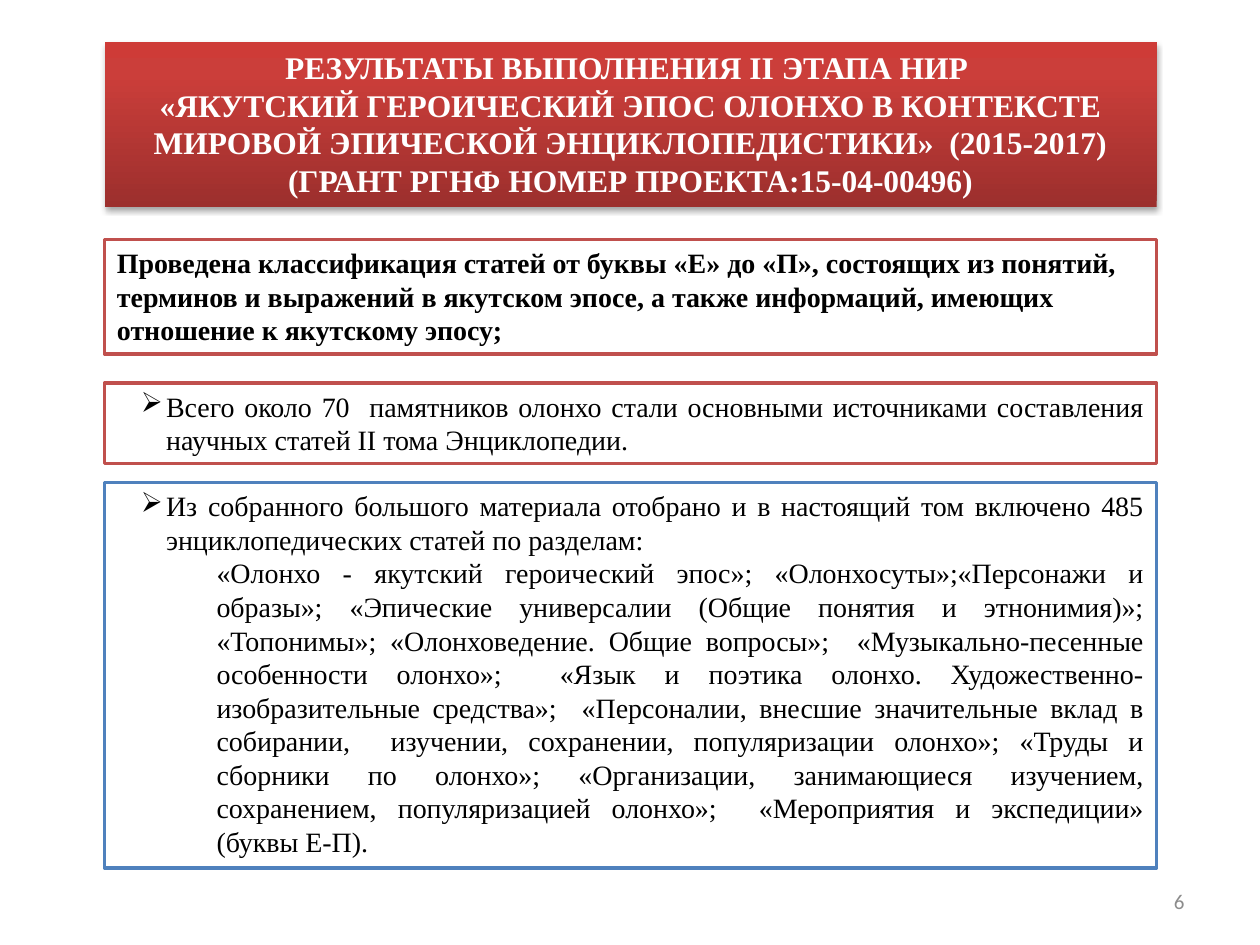
from copy import deepcopy

from lxml.etree import SubElement
from pptx import Presentation
from pptx.dml.color import RGBColor
from pptx.enum.shapes import MSO_SHAPE
from pptx.enum.text import MSO_ANCHOR, MSO_AUTO_SIZE, PP_ALIGN
from pptx.oxml.ns import qn
from pptx.util import Pt

PX = 9144  # EMU per px, 100 px to the inch
WHITE = RGBColor(0xFF, 0xFF, 0xFF)
BLACK = RGBColor(0x00, 0x00, 0x00)
GREY = RGBColor(0x8C, 0x8C, 0x8C)
RED = RGBColor(0xC0, 0x50, 0x4D)
BLUE = RGBColor(0x4F, 0x81, 0xBD)
BANNER_STOPS = [
    (0, RGBColor(0x9C, 0x2F, 0x2D)),
    (0.8, RGBColor(0xCB, 0x3E, 0x3A)),
    (1, RGBColor(0xCE, 0x3B, 0x37)),
]
LEFT, WIDTH = 83, 835

TITLE = [
    "РЕЗУЛЬТАТЫ ВЫПОЛНЕНИЯ II ЭТАПА НИР ",
    "«ЯКУТСКИЙ ГЕРОИЧЕСКИЙ ЭПОС ОЛОНХО В КОНТЕКСТЕ МИРОВОЙ ЭПИЧЕСКОЙ "
    "ЭНЦИКЛОПЕДИCТИКИ»  (2015-2017)",
    "(ГРАНТ РГНФ НОМЕР ПРОЕКТА:15-04-00496)",
]
CLASSIFICATION = (
    "Проведена классификация статей от буквы «Е» до «П», состоящих из понятий, "
    "терминов и выражений в якутском эпосе, а также информаций, имеющих "
    "отношение к якутскому эпосу;"
)
SOURCES = (
    "Всего около 70  памятников олонхо стали основными источниками "
    "составления научных статей II тома Энциклопедии. "
)
SELECTION = (
    "Из собранного большого материала отобрано и в настоящий том включено 485 "
    "энциклопедических статей по разделам: "
)
SECTIONS = (
    "«Олонхо - якутский героический эпос»; «Олонхосуты»;«Персонажи и образы»; "
    "«Эпические универсалии (Общие понятия и этнонимия)»; «Топонимы»; "
    "«Олонховедение. Общие вопросы»;  «Музыкально-песенные особенности олонхо»;  "
    "«Язык и поэтика олонхо. Художественно-изобразительные средства»;  "
    "«Персоналии, внесшие значительные вклад в собирании,  изучении, сохранении, "
    "популяризации олонхо»; «Труды и сборники по олонхо»; «Организации, "
    "занимающиеся изучением, сохранением, популяризацией олонхо»;  "
    "«Мероприятия и экспедиции» (буквы Е-П). "
)


class SlideBuilder:
    font = "Times New Roman"

    def __init__(self, slide):
        self.slide = slide

    def fill_text(self, frame, texts, size, color, align, bold=False, font=None):
        frame.word_wrap = True
        frame.text = "\n".join(texts)
        for paragraph in frame.paragraphs:
            paragraph.alignment = align
            for run in paragraph.runs:
                run.font.name = font or self.font
                run.font.size = Pt(size)
                run.font.bold = bold
                run.font.color.rgb = color

    def box(self, top, height):
        box = self.slide.shapes.add_shape(
            MSO_SHAPE.RECTANGLE, LEFT * PX, top * PX, WIDTH * PX, height * PX)
        box.shadow.inherit = False
        box.text_frame.vertical_anchor = MSO_ANCHOR.TOP
        box.text_frame.auto_size = MSO_AUTO_SIZE.SHAPE_TO_FIT_TEXT
        return box

    def banner(self, top, height, texts):
        banner = self.box(top, height)
        banner.line.fill.background()
        banner.fill.gradient()
        banner.fill.gradient_angle = 90
        properties = banner.element.spPr
        stop_list = properties.find(".//" + qn("a:gsLst"))
        stop_list.append(deepcopy(stop_list[0]))
        for stop, (position, color) in zip(banner.fill.gradient_stops, BANNER_STOPS):
            stop.position = position
            stop.color.rgb = color
        shadow = SubElement(
            properties.find(qn("a:effectLst")), qn("a:outerShdw"),
            blurRad="40000", dist="23000", dir="5400000", rotWithShape="0")
        shade = SubElement(shadow, qn("a:srgbClr"), val="000000")
        SubElement(shade, qn("a:alpha"), val="35000")
        self.fill_text(banner.text_frame, texts, 18, WHITE, PP_ALIGN.CENTER, bold=True)

    def panel(self, top, height, outline, texts, align=PP_ALIGN.LEFT, bold=False):
        panel = self.box(top, height)
        panel.fill.solid()
        panel.fill.fore_color.rgb = WHITE
        panel.line.color.rgb = outline
        panel.line.width = Pt(2)
        self.fill_text(panel.text_frame, texts, 16, BLACK, align, bold)
        return panel.text_frame.paragraphs

    def bullet_panel(self, top, height, outline, bullet, *details):
        """Panel with one arrow bullet and deeper indented details below it."""
        first, *rest = self.panel(
            top, height, outline, [bullet, *details], PP_ALIGN.JUSTIFY)
        self.indent(first, 39, -20)
        SubElement(first._p.get_or_add_pPr(), qn("a:buChar"), char="➢")
        for detail in rest:
            self.indent(detail, 79, 0)

    def indent(self, paragraph, margin, hanging):
        properties = paragraph._p.get_or_add_pPr()
        properties.set("marL", str(margin * PX))
        properties.set("indent", str(hanging * PX))

    def page_number(self, number):
        frame = self.slide.shapes.add_textbox(
            717 * PX, 695 * PX, 233 * PX, 40 * PX).text_frame
        frame.vertical_anchor = MSO_ANCHOR.MIDDLE
        self.fill_text(frame, [number], 12, GREY, PP_ALIGN.RIGHT, font="Calibri")


def main():
    presentation = Presentation()
    presentation.slide_width = 1000 * PX
    presentation.slide_height = 750 * PX
    builder = SlideBuilder(
        presentation.slides.add_slide(presentation.slide_layouts[6]))
    builder.banner(33, 131, TITLE)
    builder.panel(190, 91, RED, [CLASSIFICATION], bold=True)
    builder.bullet_panel(304, 64, RED, SOURCES)
    builder.page_number("6")
    builder.bullet_panel(383, 306, BLUE, SELECTION, SECTIONS)
    presentation.save("out.pptx")


if __name__ == "__main__":
    main()
